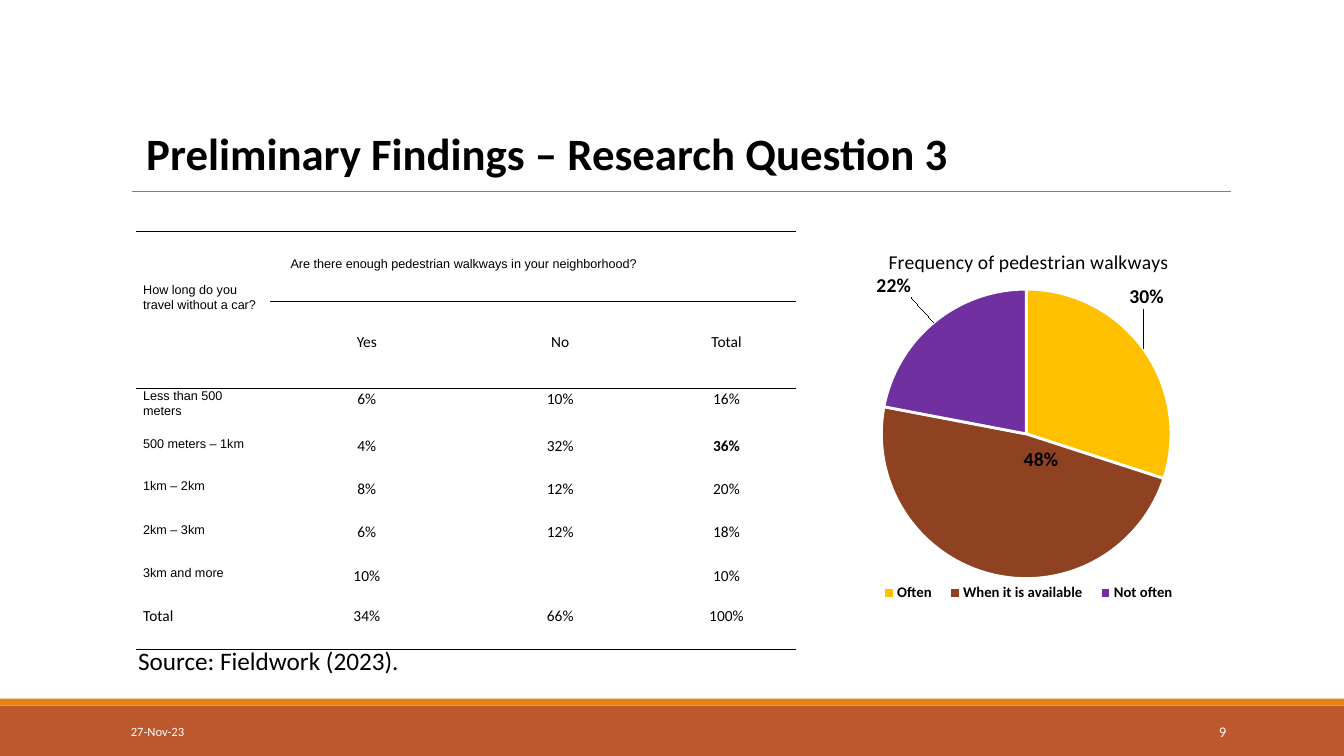
import pptx
import pptx.chart.data
import pptx.dml.color
import pptx.enum.chart
import pptx.enum.shapes
import pptx.enum.text
import pptx.oxml.ns
import pptx.util

WIDTH, HEIGHT = pptx.util.Inches(13.33), pptx.util.Inches(7.5)
COLORS = {
    "black": "000000", "white": "FFFFFF", "band": "BD582C", "stripe": "E48312", "rule": "808080",
    "often": "FFC000", "available": "8E4221", "not_often": "7030A0",
}
ALIGN = pptx.enum.text.PP_ALIGN
ANCHOR = pptx.enum.text.MSO_ANCHOR
LABEL_POSITION = pptx.enum.chart.XL_LABEL_POSITION
NO_GRID_STYLE = "{2D5ABB26-0587-4C30-8999-92F81FD0307C}"
NAMESPACES = pptx.oxml.ns.nsdecls("a", "c")

COLUMN_SHARES = [133, 192, 192, 138]
ROW_SHARES = [69, 86, 47, 42, 43, 43, 40, 43]
TABLE_ROWS = [
    ["How long do you travel without a car?",
     "Are there enough pedestrian walkways in your neighborhood?", "", ""],
    ["", "Yes", "No", "Total"],
    ["Less than 500 meters", "6%", "10%", "16%"],
    ["500 meters – 1km", "4%", "32%", "36%"],
    ["1km – 2km", "8%", "12%", "20%"],
    ["2km – 3km", "6%", "12%", "18%"],
    ["3km and more", "10%", "", "10%"],
    ["Total", "34%", "66%", "100%"],
]
HEADER_TOPS = {(0, 0): 0.5, (0, 1): 0.25, (1, 1): 0.3, (1, 2): 0.3, (1, 3): 0.3}
WALKWAY_SLICES = [
    ("Often", 0.3, "often", LABEL_POSITION.OUTSIDE_END, (-0.04, -0.09)),
    ("When it is available", 0.48, "available", LABEL_POSITION.CENTER, (0.07, -0.11)),
    ("Not often", 0.22, "not_often", LABEL_POSITION.OUTSIDE_END, (-0.04, -0.05)),
]

def color(name):
    """Return the named colour."""
    return pptx.dml.color.RGBColor.from_string(COLORS[name])

def place(left, top, width, height):
    """Turn percentages of the slide into a position and size."""
    return [round(WIDTH * left / 100), round(HEIGHT * top / 100),
            round(WIDTH * width / 100), round(HEIGHT * height / 100)]

def style_font(font, size, bold=False, ink="black", face="Calibri"):
    """Set the look of a font."""
    font.name, font.size, font.bold = face, pptx.util.Pt(size), bold
    font.color.rgb = color(ink)

def write(frame, text, size, align=ALIGN.LEFT, **look):
    """Put one run into the first paragraph of a text frame."""
    paragraph = frame.paragraphs[0]
    paragraph.alignment = align
    run = paragraph.add_run()
    run.text = text
    style_font(run.font, size, **look)
    return paragraph

def add_band(slide, box, fill):
    """Add a plain filled rectangle."""
    shape = slide.shapes.add_shape(pptx.enum.shapes.MSO_SHAPE.RECTANGLE, *box)
    shape.shadow.inherit = False
    shape.fill.solid()
    shape.fill.fore_color.rgb = color(fill)
    shape.line.fill.background()

def add_rule(slide, left, top, width):
    """Add a thin horizontal line."""
    x, y, length, _ = place(left, top, width, 0)
    line = slide.shapes.add_connector(pptx.enum.shapes.MSO_CONNECTOR.STRAIGHT, x, y, x + length, y)
    line.line.color.rgb = color("rule")
    line.line.width = pptx.util.Pt(0.5)
    line._element.spPr.append(pptx.oxml.parse_xml(f"<a:effectLst {NAMESPACES}/>"))

def add_text(slide, box, text, size, anchor=ANCHOR.TOP, **look):
    """Add a wrapping text box."""
    frame = slide.shapes.add_textbox(*box).text_frame
    frame.word_wrap = True
    frame.vertical_anchor = anchor
    write(frame, text, size, **look)

def add_title(slide, box, text):
    """Move and fill the title placeholder."""
    title = slide.shapes.title
    title.left, title.top, title.width, title.height = box
    title.text_frame.vertical_anchor = ANCHOR.TOP
    write(title.text_frame, text, 32, bold=True)

def set_borders(cell, drawn):
    """Draw black lines on the given sides of a cell and clear the others."""
    solid = f'<a:solidFill><a:srgbClr val="{COLORS["black"]}"/></a:solidFill>'
    for index, side in enumerate("LRTB"):
        fill = solid if side in drawn else "<a:noFill/>"
        cell._tc.get_or_add_tcPr().insert(index, pptx.oxml.parse_xml(
            f'<a:ln{side} {NAMESPACES} w="12700">{fill}</a:ln{side}>'))

def fill_cell(cell, row, column, text):
    """Write and format one table cell."""
    cell.fill.background()
    cell.margin_left = cell.margin_right = pptx.util.Inches(0.07)
    cell.margin_top = pptx.util.Inches(HEADER_TOPS.get((row, column), 0))
    cell.margin_bottom = 0
    if text:
        small = row == 0 or (column == 0 and text != "Total")
        paragraph = write(cell.text_frame, text, 9 if small else 11,
                          ALIGN.CENTER if column else ALIGN.LEFT,
                          bold=text == "36%", face="Arial" if small else "Calibri")
        paragraph.line_spacing = 1.07
        paragraph.space_after = pptx.util.Pt(8)
    top = row in (0, 2) or (row == 1 and column > 0)
    bottom = row in (0, 1, len(TABLE_ROWS) - 1)
    set_borders(cell, "T" * top + "B" * bottom)

def add_findings_table(slide, box):
    """Add the table of travel distance against walkways."""
    table = slide.shapes.add_table(len(ROW_SHARES), len(COLUMN_SHARES), *box).table
    table.first_row = table.horz_banding = False
    table._tbl.tblPr.find(pptx.oxml.ns.qn("a:tableStyleId")).text = NO_GRID_STYLE
    for column, share in zip(table.columns, COLUMN_SHARES):
        column.width = round(box[2] * share / sum(COLUMN_SHARES))
    for row, share in zip(table.rows, ROW_SHARES):
        row.height = round(box[3] * share / sum(ROW_SHARES))
    table.cell(0, 0).merge(table.cell(1, 0))
    table.cell(0, 1).merge(table.cell(0, 2))
    for row, texts in enumerate(TABLE_ROWS):
        for column, text in enumerate(texts):
            fill_cell(table.cell(row, column), row, column, text)

def set_layout(element, index, modes="", **shares):
    """Place a chart part by shares of the chart."""
    for old in element.findall(pptx.oxml.ns.qn("c:layout")):
        element.remove(old)
    parts = modes + "".join(f'<c:{key} val="{share}"/>' for key, share in shares.items())
    element.insert(index, pptx.oxml.parse_xml(
        f"<c:layout {NAMESPACES}><c:manualLayout>{parts}</c:manualLayout></c:layout>"))

def style_slice(point, fill, position):
    """Format one pie slice and its label."""
    point.format.fill.solid()
    point.format.fill.fore_color.rgb = color(fill)
    point.format.line.color.rgb = color("white")
    point.format.line.width = pptx.util.Pt(2)
    style_font(point.data_label.font, 14, bold=True)
    point.data_label.position = position

def add_walkway_chart(slide, box):
    """Add the pie chart of walkway frequency."""
    data = pptx.chart.data.CategoryChartData(number_format="0%")
    data.categories = [name for name, *_ in WALKWAY_SLICES]
    data.add_series("Series 1", [value for _, value, *_ in WALKWAY_SLICES])
    chart = slide.shapes.add_chart(pptx.enum.chart.XL_CHART_TYPE.PIE, *box, data).chart
    style_font(chart.font, 10)
    write(chart.chart_title.text_frame, "Frequency of pedestrian walkways", 14, ALIGN.CENTER)
    edges = '<c:xMode val="edge"/><c:yMode val="edge"/>'
    set_layout(chart.chart_title._element, 1, edges, x=0.19, y=0.03)
    set_layout(chart._chartSpace.chart.plotArea, 0, '<c:layoutTarget val="inner"/>' + edges,
               x=0.04, y=0.14, w=0.9, h=0.72)
    chart.has_legend = True
    chart.legend.position = pptx.enum.chart.XL_LEGEND_POSITION.BOTTOM
    chart.legend.include_in_layout = False
    style_font(chart.legend.font, 10.5, bold=True)
    set_layout(chart.legend._element, 1, edges, x=0.16, y=0.86, w=0.67, h=0.07)
    chart.plots[0].vary_by_categories = True
    series = chart.plots[0].series[0]
    labels = series.data_labels
    labels.show_value = True
    labels.number_format, labels.number_format_is_linked = "0%", False
    for index, (_, _, fill, position, (x, y)) in enumerate(WALKWAY_SLICES):
        style_slice(series.points[index], fill, position)
        set_layout(labels._element.findall(pptx.oxml.ns.qn("c:dLbl"))[index], 1, x=x, y=y)

def main():
    """Build and save the slide."""
    presentation = pptx.Presentation()
    presentation.slide_width, presentation.slide_height = WIDTH, HEIGHT
    slide = presentation.slides.add_slide(presentation.slide_layouts[5])
    add_band(slide, place(0, 93.33, 100, 6.67), "band")
    add_band(slide, place(0, 92.4, 100, 0.93), "stripe")
    add_rule(slide, 9.83, 25.33, 81.77)
    add_title(slide, place(10.13, 16, 64, 8.53), "Preliminary Findings – Research Question 3")
    add_findings_table(slide, place(10.13, 30.6, 49.1, 55.3))
    add_walkway_chart(slide, place(59.19, 30.8, 35.03, 53.2))
    add_text(slide, place(9.53, 84.67, 27.46, 5.33), "Source: Fieldwork (2023).", 18)
    add_text(slide, place(9, 94.13, 20.25, 5.33), "27-Nov-23", 9, ANCHOR.MIDDLE, ink="white")
    add_text(slide, place(81.25, 94.13, 10.73, 5.33), "9", 10.5, ANCHOR.MIDDLE,
             align=ALIGN.RIGHT, ink="white")
    presentation.save("out.pptx")

if __name__ == "__main__":
    main()
